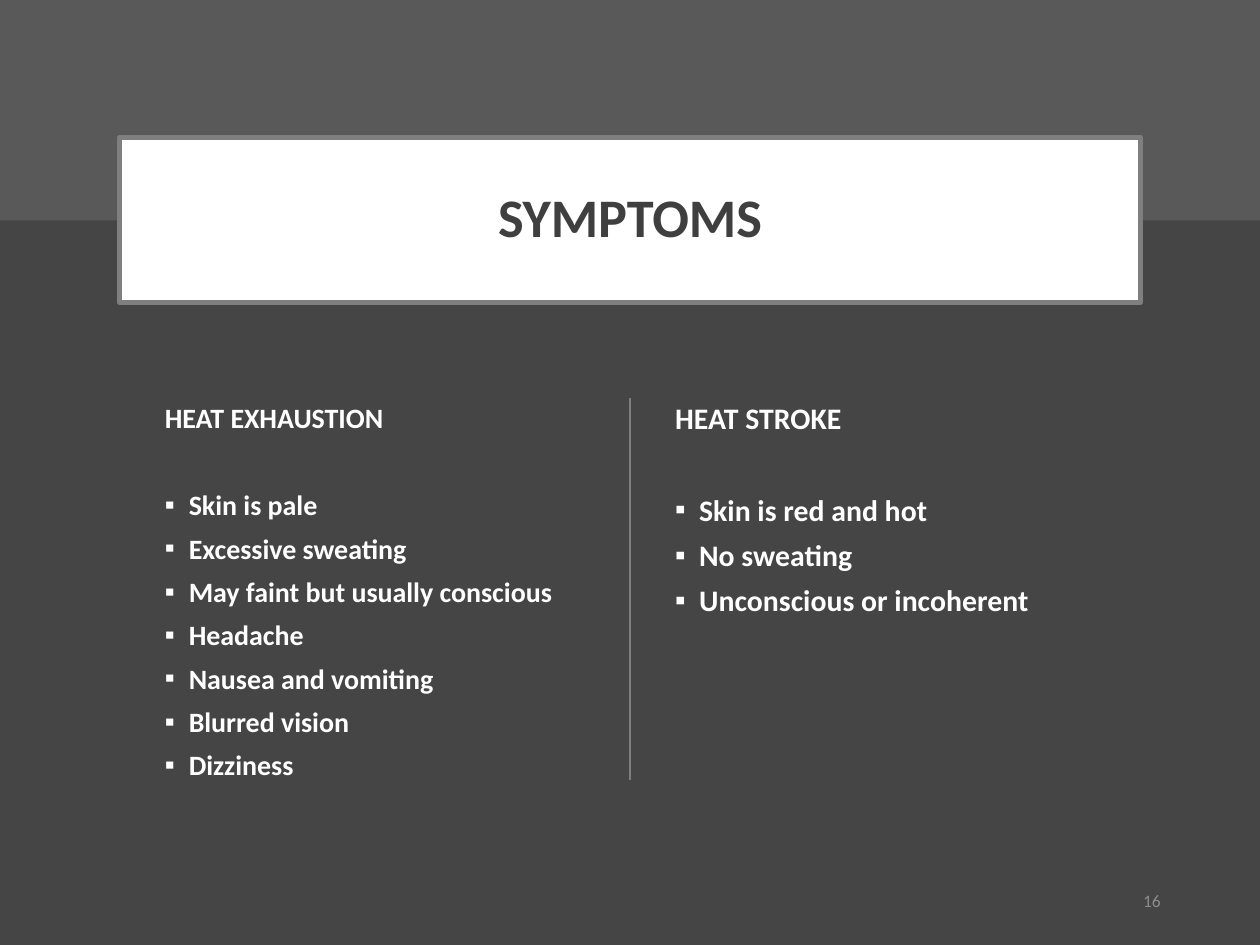
from dataclasses import dataclass
from lxml.etree import SubElement
from pptx import Presentation
from pptx.dml.color import RGBColor
from pptx.enum.shapes import MSO_CONNECTOR as Connector, MSO_SHAPE as Shape
from pptx.enum.text import MSO_ANCHOR as Anchor, PP_ALIGN as Align
from pptx.oxml.ns import qn
from pptx.util import Inches, Pt

COLUMNS, ROWS = 100, 75
LINE_SPACING, SPACE_BEFORE = 0.9, 7.5


def color(value):
    """Turn a hex string into a colour."""
    return RGBColor.from_string(value)


@dataclass
class SlideBuilder:
    """Hold the style and the current slide; lengths are grid columns and rows."""

    presentation: object
    slide: object
    font: str = "Calibri"
    background: str = "454545"
    band_fill: str = "595959"
    accent: str = "7F7F7F"
    title_ink: str = "3F3F3F"
    number_ink: str = "8C8C8C"
    light: str = "FFFFFF"

    def place(self, *cells):
        """Convert alternating columns and rows to slide lengths."""
        width, height = self.presentation.slide_width, self.presentation.slide_height
        units = (width / COLUMNS, height / ROWS)
        return [round(cell * units[i % 2]) for i, cell in enumerate(cells)]

    def paint_background(self):
        """Fill the slide background."""
        fill = self.slide.background.fill
        fill.solid()
        fill.fore_color.rgb = color(self.background)

    def style(self, paragraph, size, ink, bold=True):
        """Format the runs of a paragraph."""
        for run in paragraph.runs:
            run.font.name, run.font.size, run.font.bold = self.font, Pt(size), bold
            run.font.color.rgb = color(ink)

    def box(self, cells, fill, line=None):
        """Draw a rectangle with an optional border."""
        shape = self.slide.shapes.add_shape(Shape.RECTANGLE, *self.place(*cells))
        shape.shadow.inherit = False
        shape.fill.solid()
        shape.fill.fore_color.rgb = color(fill)
        if line:
            shape.line.color.rgb = color(line)
            shape.line.width = Pt(3)
        else:
            shape.line.fill.background()
        return shape

    def title(self, cells, text):
        """Draw the framed title."""
        frame = self.box(cells, self.light, self.accent).text_frame
        frame.text = text
        frame.vertical_anchor = Anchor.MIDDLE
        paragraph = frame.paragraphs[0]
        paragraph.alignment = Align.CENTER
        paragraph.line_spacing = LINE_SPACING
        self.style(paragraph, 31, self.title_ink)

    def text_box(self, cells, text):
        """Add a wrapping text box and return its frame."""
        frame = self.slide.shapes.add_textbox(*self.place(*cells)).text_frame
        frame.word_wrap = True
        frame.text = text
        return frame

    def bullet(self, paragraph, indent=0.19):
        """Give a paragraph a hanging square bullet."""
        properties = paragraph._p.get_or_add_pPr()
        properties.set("marL", str(Inches(indent)))
        properties.set("indent", str(-Inches(indent)))
        SubElement(properties, qn("a:buFont"), typeface=self.font)
        SubElement(properties, qn("a:buChar"), char="▪")

    def symptom_list(self, cells, heading, symptoms, size):
        """Write a heading with bulleted symptoms one line below it."""
        frame = self.text_box(cells, "\n".join([heading, *symptoms]))
        for paragraph in frame.paragraphs:
            paragraph.line_spacing = LINE_SPACING
            paragraph.space_before = Pt(SPACE_BEFORE)
            self.style(paragraph, size, self.light)
        first, *items = frame.paragraphs
        first.space_after = Pt(1.1 * size + SPACE_BEFORE)
        for paragraph in items:
            self.bullet(paragraph)

    def divider(self, cells):
        """Draw a thin straight line."""
        line = self.slide.shapes.add_connector(Connector.STRAIGHT, *self.place(*cells))
        line.line.color.rgb = color(self.accent)
        line.line.width = Pt(1.5)
        SubElement(line._element.spPr, qn("a:effectLst"))

    def page_number(self, cells, text):
        """Write the page number at the right."""
        frame = self.text_box(cells, text)
        frame.vertical_anchor = Anchor.MIDDLE
        paragraph = frame.paragraphs[0]
        paragraph.alignment = Align.RIGHT
        paragraph.space_after = Pt(6)
        self.style(paragraph, 10, self.number_ink, bold=False)


def main():
    """Build the symptoms slide."""
    presentation = Presentation()
    presentation.slide_width, presentation.slide_height = Inches(10), Inches(7.5)
    slide = presentation.slides.add_slide(presentation.slide_layouts[6])
    builder = SlideBuilder(presentation, slide)
    builder.paint_background()
    builder.box((0, 0, COLUMNS, 17.5), builder.band_fill)
    builder.title((9.5, 10.9, 81, 13.1), "SYMPTOMS")
    top = 31.6
    lists = [
        (12.1, 16, "HEAT EXHAUSTION", [
            "Skin is pale", "Excessive sweating", "May faint but usually conscious",
            "Headache", "Nausea and vomiting", "Blurred vision", "Dizziness"]),
        (52.6, 17, "HEAT STROKE", [
            "Skin is red and hot", "No sweating", "Unconscious or incoherent"]),
    ]
    for left, size, heading, symptoms in lists:
        builder.symptom_list((left, top, 35.2, 32.4), heading, symptoms, size)
    builder.divider((COLUMNS / 2, top, COLUMNS / 2, 61.9))
    builder.page_number((70.6, 69.5, 22.5, 4), "16")
    presentation.save("out.pptx")


if __name__ == "__main__":
    main()
